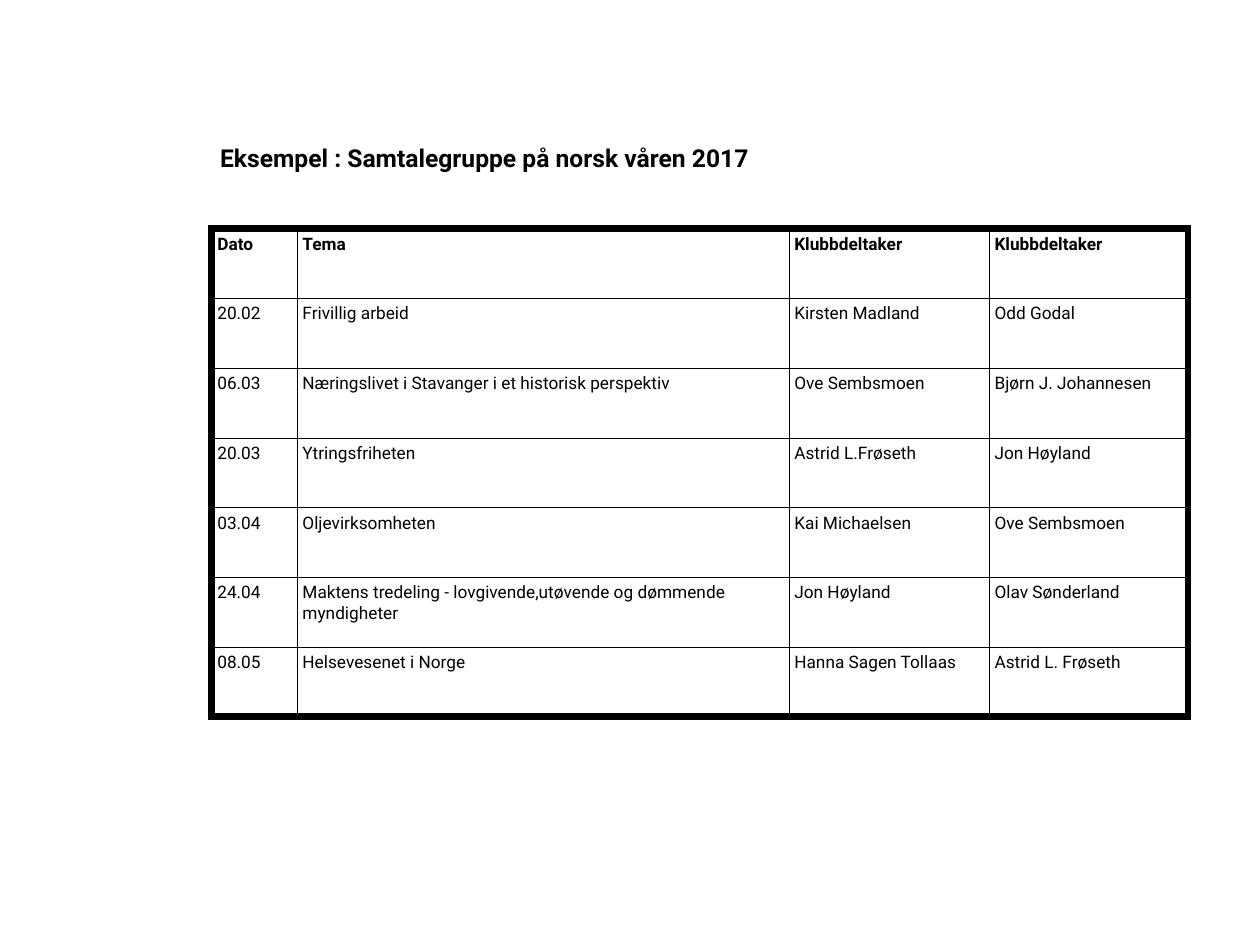
"""Build a slide with the spring plan of a Norwegian talk group."""
from dataclasses import dataclass

from lxml import etree
from pptx import Presentation
from pptx.dml.color import RGBColor
from pptx.enum.text import MSO_ANCHOR, MSO_AUTO_SIZE, PP_ALIGN
from pptx.oxml.ns import qn
from pptx.slide import Slide
from pptx.table import _Cell
from pptx.text.text import TextFrame
from pptx.util import Cm, Pt

LEFT = PP_ALIGN.LEFT
TOP = MSO_ANCHOR.TOP
MIDDLE = MSO_ANCHOR.MIDDLE
GROW = MSO_AUTO_SIZE.SHAPE_TO_FIT_TEXT

COLORS = {"ink": "000000", "paper": "FFFFFF"}
FONT = "Roboto"
INSET = Cm(0.16)
MARGINS = {f"margin_{side}": INSET for side in ("left", "top", "right", "bottom")}
THICK, THIN = Pt(6), Pt(0.25)
WIDTHS = (2.44, 14.1, 5.74, 5.71)
HEIGHT = 2.0


@dataclass(frozen=True)
class Meeting:
    """One row of the plan."""
    date: str
    theme: str
    first: str
    second: str

    def texts(self) -> tuple[str, ...]:
        """Return the row's texts from left to right."""
        return self.date, self.theme, self.first, self.second


PLAN = (
    Meeting("Dato", "Tema", "Klubbdeltaker", "Klubbdeltaker"),
    Meeting("20.02", "Frivillig arbeid", "Kirsten Madland", "Odd Godal"),
    Meeting("06.03", "Næringslivet i Stavanger i et historisk perspektiv",
            "Ove Sembsmoen", "Bjørn J. Johannesen"),
    Meeting("20.03", "Ytringsfriheten", "Astrid L.Frøseth", "Jon Høyland"),
    Meeting("03.04", "Oljevirksomheten", "Kai Michaelsen", "Ove Sembsmoen"),
    Meeting("24.04", "Maktens tredeling - lovgivende,utøvende og dømmende myndigheter",
            "Jon Høyland", "Olav Sønderland"),
    Meeting("08.05", "Helsevesenet i Norge", "Hanna Sagen Tollaas", "Astrid L. Frøseth"),
)


def apply(target: object, values: dict[str, object]) -> None:
    """Set each named format value on the target."""
    for name, value in values.items():
        setattr(target, name, value)


def write(frame: TextFrame, text: str, size: float, bold: bool) -> None:
    """Write one left-aligned line of styled text."""
    line = frame.paragraphs[0]
    line.alignment = LEFT
    run = line.add_run()
    run.text = text
    apply(run.font, {"name": FONT, "size": Pt(size), "bold": bold})
    run.font.color.rgb = RGBColor.from_string(COLORS["ink"])


def border(cell: _Cell, edges: dict[str, bool]) -> None:
    """Draw the cell's borders, thick along the table's outer edges."""
    props = cell._tc.get_or_add_tcPr()
    for side, outer in edges.items():
        line = etree.SubElement(props, qn(f"a:ln{side}"), w=str(THICK if outer else THIN))
        fill = etree.SubElement(line, qn("a:solidFill"))
        etree.SubElement(fill, qn("a:srgbClr"), val=COLORS["ink"])


def add_title(slide: Slide, text: str) -> None:
    """Place and format the slide's title."""
    title = slide.shapes.title
    apply(title, {"left": Cm(6.15), "top": Cm(3.96), "width": Cm(16.51), "height": Cm(1.12)})
    frame = title.text_frame
    apply(frame, {"word_wrap": False, "auto_size": GROW, "vertical_anchor": MIDDLE, **MARGINS})
    write(frame, text, 20, True)


def add_plan(slide: Slide, plan: tuple[Meeting, ...]) -> None:
    """Add the table of meetings."""
    rows, cols = len(plan), len(WIDTHS)
    table = slide.shapes.add_table(rows, cols, Cm(6.07), Cm(6.55),
                                   Cm(sum(WIDTHS)), Cm(rows * HEIGHT)).table
    for column, width in zip(table.columns, WIDTHS):
        column.width = Cm(width)
    for r, meeting in enumerate(plan):
        table.rows[r].height = Cm(HEIGHT)
        for c, text in enumerate(meeting.texts()):
            cell = table.cell(r, c)
            apply(cell, {"vertical_anchor": TOP, **MARGINS})
            border(cell, {"L": c == 0, "R": c == cols - 1, "T": r == 0, "B": r == rows - 1})
            cell.fill.solid()
            cell.fill.fore_color.rgb = RGBColor.from_string(COLORS["paper"])
            write(cell.text_frame, text, 14, r == 0)


def main() -> None:
    """Build and save the deck."""
    deck = Presentation()
    apply(deck, {"slide_width": Cm(36.12), "slide_height": Cm(27.1)})
    slide = deck.slides.add_slide(deck.slide_layouts.get_by_name("Title Only"))
    add_plan(slide, PLAN)
    add_title(slide, "Eksempel : Samtalegruppe på norsk våren 2017")
    deck.save("out.pptx")


if __name__ == "__main__":
    main()
